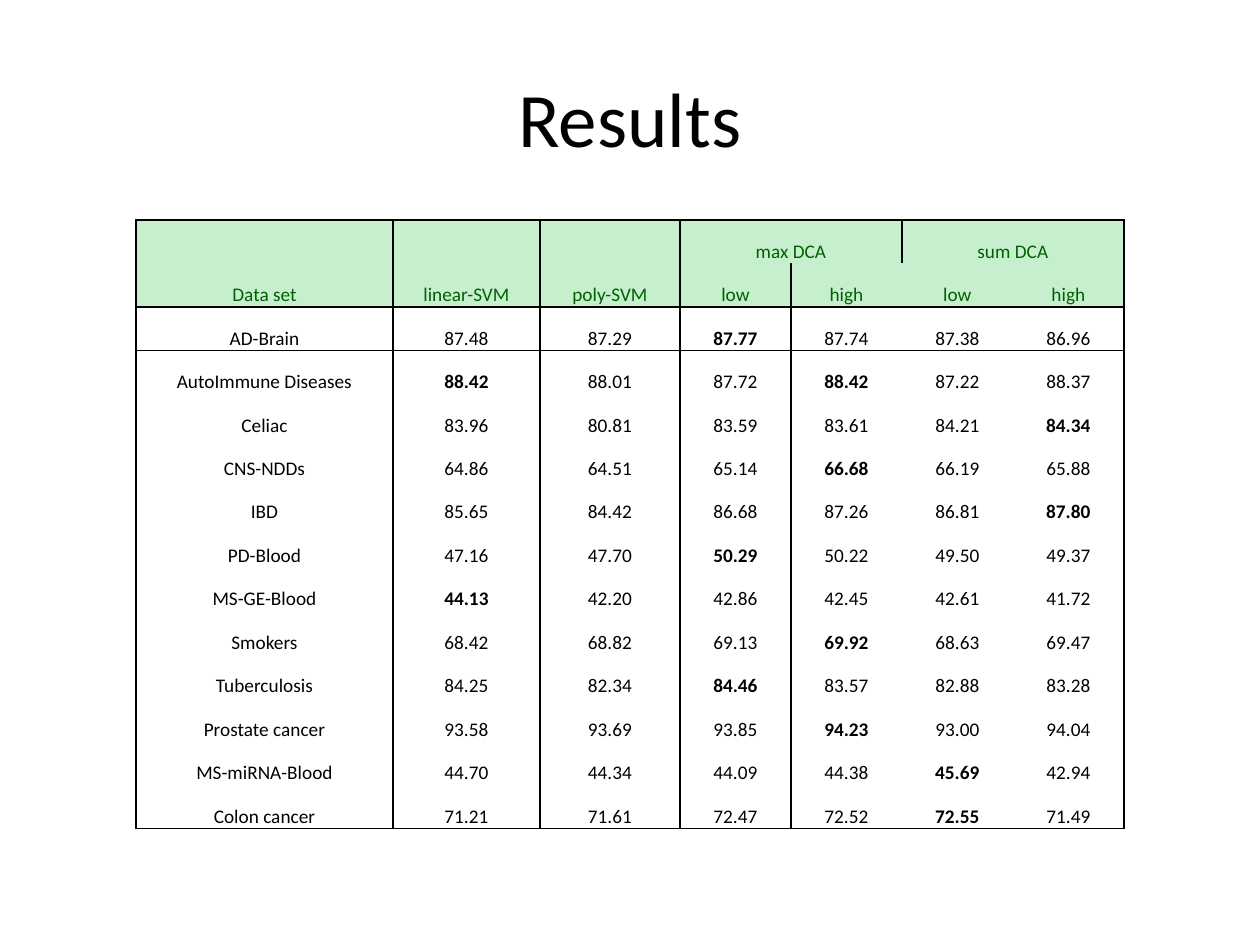
from lxml import etree
from pptx import Presentation
from pptx.dml.color import RGBColor
from pptx.enum.text import MSO_ANCHOR, PP_ALIGN
from pptx.oxml.ns import qn
from pptx.util import Pt

MIDDLE, BOTTOM = MSO_ANCHOR.MIDDLE, MSO_ANCHOR.BOTTOM
CENTER = PP_ALIGN.CENTER
EMU_PER_PX = 914400 / 126
NO_STYLE = "{2D5ABB26-0587-4C30-8999-92F81FD0307C}"
COLORS = {"ink": "000000", "header_fill": "C6EFCE", "header_text": "006100"}

COLUMN_WIDTHS = [257, 147, 140, 111, 111, 111, 111]
LEFT_EDGES, RIGHT_EDGES = {0, 1, 3}, {0, 2, 6}
TOP_EDGES, BOTTOM_EDGES = {0, 2}, {1, 13}
HEADER = [
    ["Data set", "linear-SVM", "poly-SVM", "max DCA", "", "sum DCA", ""],
    ["", "", "", "low", "high", "low", "high"],
]
HEADER_MERGES = [
    ((0, 0), (1, 0)),
    ((0, 1), (1, 1)),
    ((0, 2), (1, 2)),
    ((0, 3), (0, 4)),
    ((0, 5), (0, 6)),
]
ACCURACY = [
    ("AD-Brain", 87.48, 87.29, 87.77, 87.74, 87.38, 86.96),
    ("AutoImmune Diseases", 88.42, 88.01, 87.72, 88.42, 87.22, 88.37),
    ("Celiac", 83.96, 80.81, 83.59, 83.61, 84.21, 84.34),
    ("CNS-NDDs", 64.86, 64.51, 65.14, 66.68, 66.19, 65.88),
    ("IBD", 85.65, 84.42, 86.68, 87.26, 86.81, 87.80),
    ("PD-Blood", 47.16, 47.70, 50.29, 50.22, 49.50, 49.37),
    ("MS-GE-Blood", 44.13, 42.20, 42.86, 42.45, 42.61, 41.72),
    ("Smokers", 68.42, 68.82, 69.13, 69.92, 68.63, 69.47),
    ("Tuberculosis", 84.25, 82.34, 84.46, 83.57, 82.88, 83.28),
    ("Prostate cancer", 93.58, 93.69, 93.85, 94.23, 93.00, 94.04),
    ("MS-miRNA-Blood", 44.70, 44.34, 44.09, 44.38, 45.69, 42.94),
    ("Colon cancer", 71.21, 71.61, 72.47, 72.52, 72.55, 71.49),
]


def px(length):
    return round(length * EMU_PER_PX)


def apply(target, values):
    for name, value in values.items():
        setattr(target, name, value)


def write(paragraph, text, size, color, bold=False):
    paragraph.alignment = CENTER
    run = paragraph.add_run()
    run.text = text
    apply(run.font, {"name": "Calibri", "size": Pt(size), "bold": bold})
    run.font.color.rgb = RGBColor.from_string(COLORS[color])


def add_title(slide, left, top, width, height):
    title = slide.shapes.add_textbox(px(left), px(top), px(width), px(height))
    apply(title.text_frame, {"word_wrap": True, "vertical_anchor": MIDDLE})
    write(title.text_frame.paragraphs[0], "Results", 44, "ink")


def draw_borders(cell, row, column):
    last_row, last_column = row, column
    if cell.is_merge_origin:
        last_row += cell.span_height - 1
        last_column += cell.span_width - 1
    sides = {
        "a:lnL": column in LEFT_EDGES,
        "a:lnR": last_column in RIGHT_EDGES,
        "a:lnT": row in TOP_EDGES,
        "a:lnB": last_row in BOTTOM_EDGES,
    }
    properties = cell._tc.get_or_add_tcPr()
    for tag, is_edge in sides.items():
        if is_edge:
            line = etree.SubElement(properties, qn(tag), w=str(Pt(1)))
            fill = etree.SubElement(line, qn("a:solidFill"))
            etree.SubElement(fill, qn("a:srgbClr"), val=COLORS["ink"])


def fill_cell(cell, text, color, bold):
    apply(cell, {
        "vertical_anchor": BOTTOM,
        "margin_left": px(9),
        "margin_right": px(9),
        "margin_top": 0,
        "margin_bottom": 0,
    })
    if color == "header_text":
        cell.fill.solid()
        cell.fill.fore_color.rgb = RGBColor.from_string(COLORS["header_fill"])
    else:
        cell.fill.background()
    paragraph = cell.text_frame.paragraphs[0]
    paragraph.line_spacing = 1.15
    if text:
        write(paragraph, text, 11, color, bold)
    else:
        paragraph.font.size = Pt(11)


def add_results(slide, left, top, width, height):
    row_count = len(HEADER) + len(ACCURACY)
    table = slide.shapes.add_table(
        row_count, len(COLUMN_WIDTHS), px(left), px(top), px(width), px(height)
    ).table
    apply(table, {"first_row": False, "horz_banding": False})
    table._tbl.tblPr.find(qn("a:tableStyleId")).text = NO_STYLE
    for column, column_width in zip(table.columns, COLUMN_WIDTHS):
        column.width = px(column_width)
    for first, last in HEADER_MERGES:
        table.cell(*first).merge(table.cell(*last))

    rows = [[(label, "header_text", False) for label in labels] for labels in HEADER]
    for data_set, *scores in ACCURACY:
        best = max(scores)
        rows.append([(data_set, "ink", False)]
                    + [(f"{score:.2f}", "ink", score == best) for score in scores])
    for r, entries in enumerate(rows):
        for c, entry in enumerate(entries):
            cell = table.cell(r, c)
            draw_borders(cell, r, c)
            fill_cell(cell, *entry)


def main():
    presentation = Presentation()
    apply(presentation, {"slide_width": px(1260), "slide_height": px(945)})
    slide = presentation.slides.add_slide(presentation.slide_layouts[6])
    add_title(slide, 63, 38, 1134, 157)
    add_results(slide, 136, 220, sum(COLUMN_WIDTHS), 609)
    presentation.save("out.pptx")


if __name__ == "__main__":
    main()
